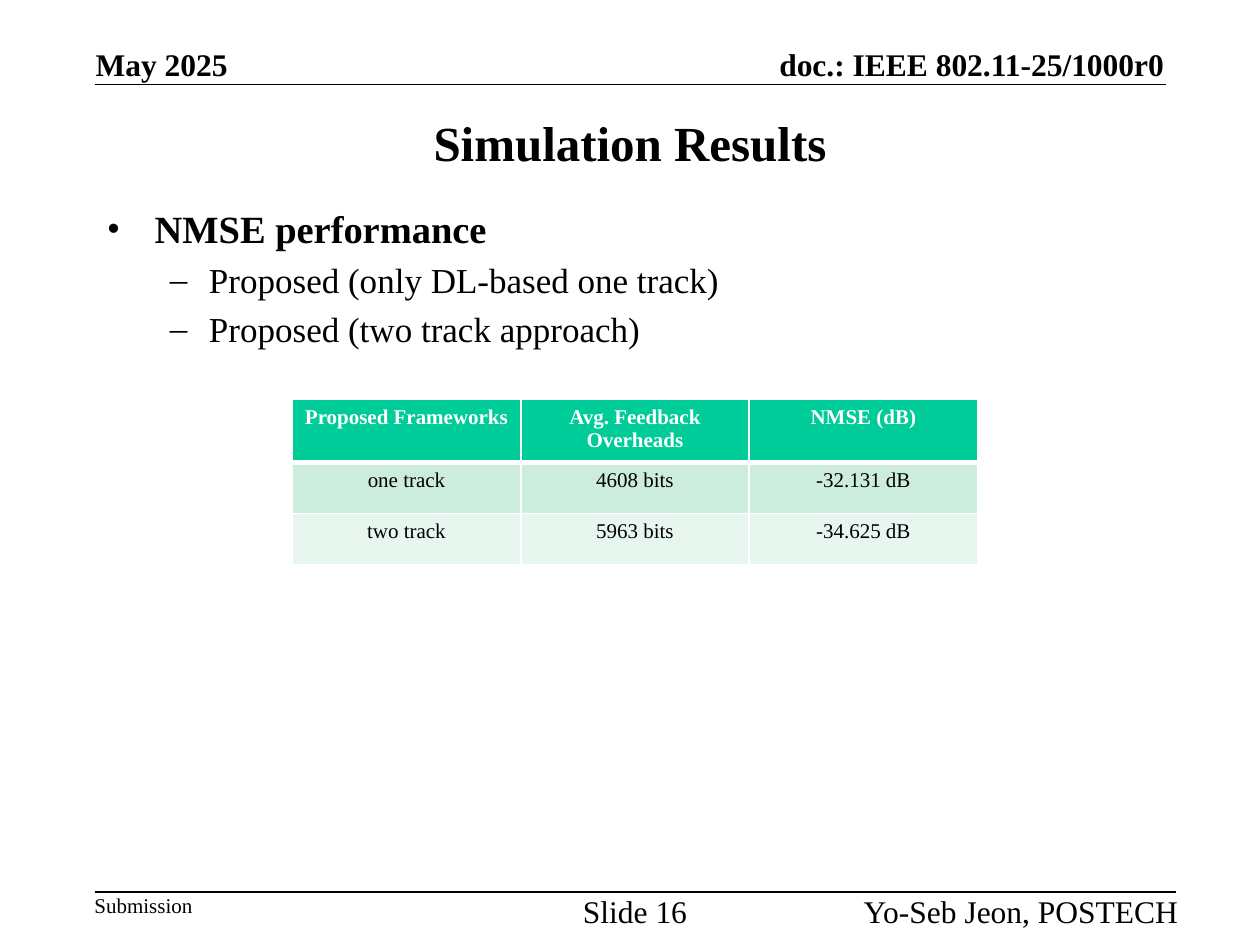
from lxml import etree
from pptx import Presentation
from pptx.dml.color import RGBColor
from pptx.enum.shapes import MSO_CONNECTOR
from pptx.enum.text import MSO_ANCHOR, PP_ALIGN
from pptx.oxml.ns import qn
from pptx.util import Inches, Pt

LEFT, CENTER, RIGHT = PP_ALIGN.LEFT, PP_ALIGN.CENTER, PP_ALIGN.RIGHT
TOP, MIDDLE, BOTTOM = MSO_ANCHOR.TOP, MSO_ANCHOR.MIDDLE, MSO_ANCHOR.BOTTOM
STRAIGHT = MSO_CONNECTOR.STRAIGHT

FONT = "Times New Roman"
WIDTH, HEIGHT = Inches(10), Inches(7.5)
BLACK, WHITE = "000000", "FFFFFF"
HEADER_FILL = "00CC99"
BAND_FILLS = ("CCECDE", "E7F6EF")
RESULTS = (
    ("Proposed Frameworks", "Avg. Feedback Overheads", "NMSE (dB)"),
    ("one track", "4608 bits", "-32.131 dB"),
    ("two track", "5963 bits", "-34.625 dB"),
)
BULLETS = (
    ("NMSE performance", 0),
    ("Proposed (only DL-based one track)", 1),
    ("Proposed (two track approach)", 1),
)
BULLET_STYLES = (("•", 0.38, -0.38, 22, True), ("–", 0.81, -0.31, 20, False))


def across(percent):
    return round(WIDTH * percent / 100)


def down(percent):
    return round(HEIGHT * percent / 100)


def color(value):
    return RGBColor.from_string(value)


def style(paragraph, size, bold=False, ink=BLACK, align=LEFT):
    paragraph.alignment = align
    for run in paragraph.runs:
        run.font.name = FONT
        run.font.size = Pt(size)
        run.font.bold = bold
        run.font.color.rgb = color(ink)


def add_frame(slide, left, top, width, height, anchor=TOP):
    frame = slide.shapes.add_textbox(
        across(left), down(top), across(width), down(height)).text_frame
    frame.word_wrap = True
    frame.vertical_anchor = anchor
    return frame


def add_label(slide, text, place, size, bold=False, align=LEFT, anchor=TOP):
    frame = add_frame(slide, *place, anchor)
    frame.margin_left = frame.margin_right = 0
    frame.margin_top = frame.margin_bottom = 0
    frame.text = text
    style(frame.paragraphs[0], size, bold, align=align)


def add_rule(slide, start, end, height):
    rule = slide.shapes.add_connector(
        STRAIGHT, across(start), down(height), across(end), down(height))
    rule.line.color.rgb = color(BLACK)
    rule.line.width = Pt(1)
    etree.SubElement(rule._element.spPr, qn("a:effectLst"))


def add_title(slide, text):
    frame = add_frame(slide, 7.5, 10, 85, 10, MIDDLE)
    frame.text = text
    style(frame.paragraphs[0], 28, True, align=CENTER)


def add_bullets(slide):
    frame = add_frame(slide, 7.5, 21.07, 85, 67.73)
    frame.text = "\n".join(text for text, _ in BULLETS)
    for paragraph, (_, level) in zip(frame.paragraphs, BULLETS):
        mark, margin, indent, size, bold = BULLET_STYLES[level]
        paragraph.level = level
        style(paragraph, size, bold)
        paragraph.space_before = Pt(size * 0.2)
        properties = paragraph._p.get_or_add_pPr()
        properties.set("marL", str(Inches(margin)))
        properties.set("indent", str(Inches(indent)))
        etree.SubElement(properties, qn("a:buFont"), typeface=FONT)
        etree.SubElement(properties, qn("a:buChar"), char=mark)


def add_border(cell, side, points):
    properties = cell._tc.get_or_add_tcPr()
    border = etree.SubElement(properties, qn(f"a:ln{side}"), w=str(Pt(points)))
    fill = etree.SubElement(border, qn("a:solidFill"))
    etree.SubElement(fill, qn("a:srgbClr"), val=WHITE)


def fill_cell(cell, text, row):
    header = row == 0
    cell.text = text
    style(cell.text_frame.paragraphs[0], 12, header,
          WHITE if header else BLACK, CENTER)
    for side in "LRTB" if header else "LRB":
        add_border(cell, side, 3 if header and side == "B" else 1)
    cell.fill.solid()
    cell.fill.fore_color.rgb = color(
        HEADER_FILL if header else BAND_FILLS[(row - 1) % 2])


def add_results(slide):
    row_height = down(5.4)
    table = slide.shapes.add_table(
        len(RESULTS), len(RESULTS[0]), across(23.2), down(42.27),
        across(54.4), row_height * len(RESULTS)).table
    for row, values in enumerate(RESULTS):
        for column, value in enumerate(values):
            fill_cell(table.cell(row, column), value, row)


def main():
    deck = Presentation()
    deck.slide_width, deck.slide_height = WIDTH, HEIGHT
    slide = deck.slides.add_slide(deck.slide_layouts[6])

    add_label(slide, "doc.: IEEE 802.11-25/1000r0", (56.4, 4.8, 36, 4),
              18, True, RIGHT, BOTTOM)
    add_rule(slide, 7.5, 92.5, 8.93)
    add_label(slide, "Submission", (7.5, 94.4, 9, 2.67), 12)
    add_rule(slide, 7.5, 93.3, 94.4)
    add_bullets(slide)
    add_title(slide, "Simulation Results")
    add_label(slide, "May 2025", (7.6, 4.8, 12, 4), 18, True, anchor=BOTTOM)
    add_label(slide, "Slide 16", (45.4, 94.4, 10, 4), 18, align=CENTER)
    add_label(slide, "Yo-Seb Jeon, POSTECH", (66.5, 94.4, 27, 4),
              18, align=RIGHT)
    add_results(slide)
    deck.save("out.pptx")


if __name__ == "__main__":
    main()
